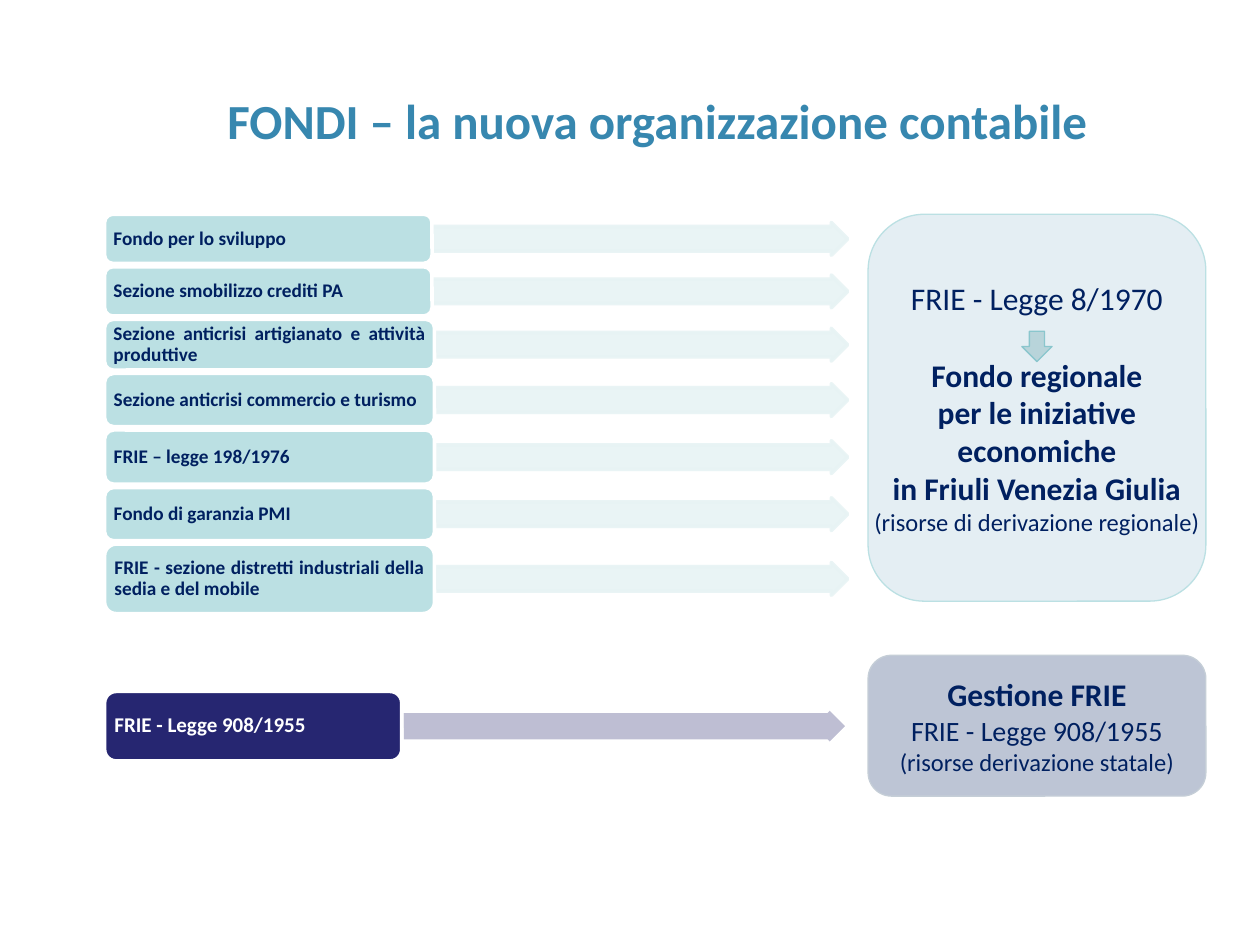
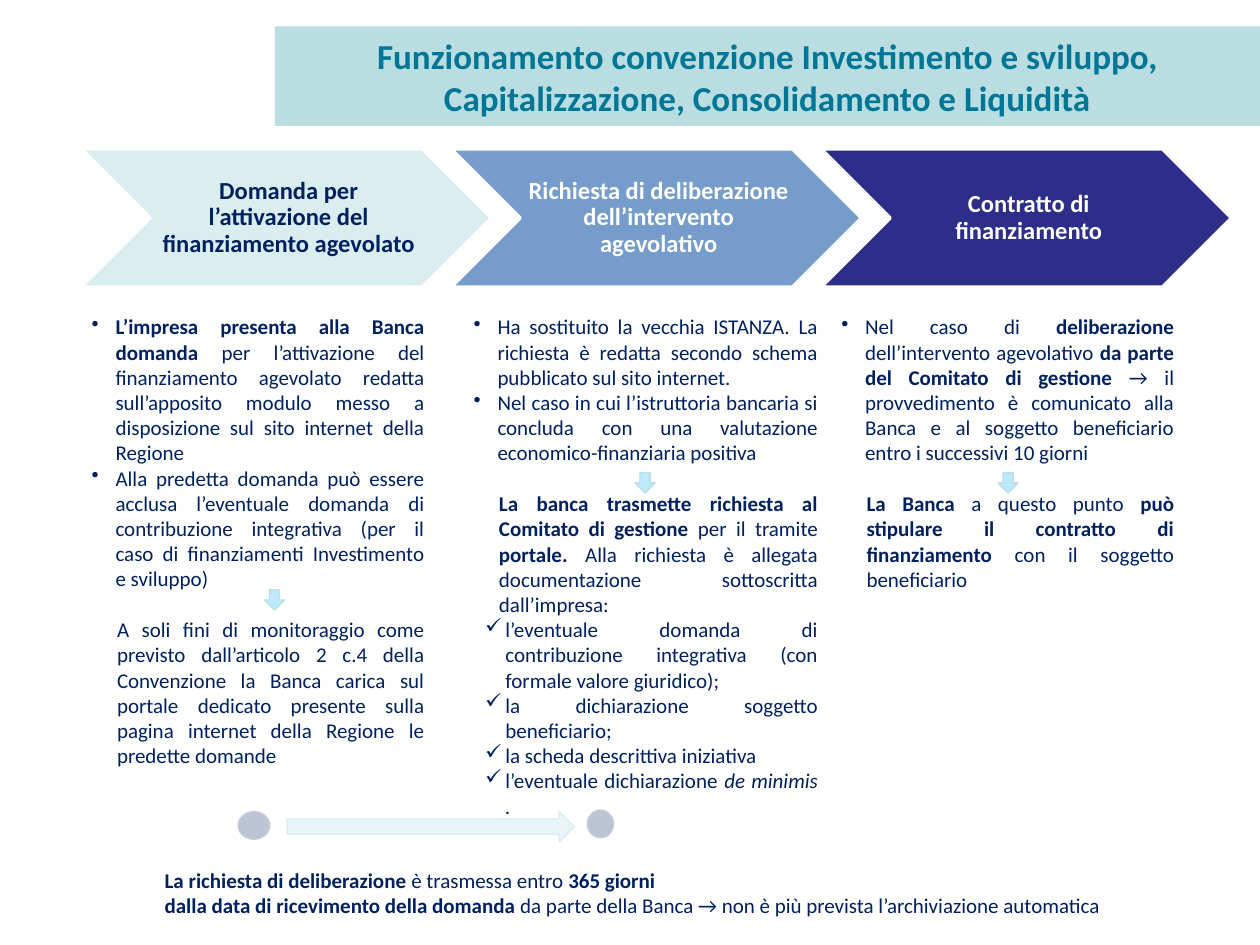
from dataclasses import dataclass
from typing import NamedTuple

from lxml import etree
from pptx import Presentation
from pptx.dml.color import RGBColor
from pptx.enum import shapes, text
from pptx.oxml import ns
from pptx.util import Cm, Pt

FONT = "Calibri"
NAVY, WHITE, AQUA, PALE = "002060", "FFFFFF", "BBE0E3", "E7F3F4"
GREY_LINE = "C5CED7"
KIND = shapes.MSO_SHAPE
ALIGN = text.PP_ALIGN
MIDDLE, TOP = text.MSO_ANCHOR.MIDDLE, text.MSO_ANCHOR.TOP
DEFAULT_INSETS = (0.25, 0.13, 0.25, 0.13)


class Area(NamedTuple):
    """Left, top, width and height in centimetres."""
    left: float
    top: float
    width: float
    height: float


class Look(NamedTuple):
    fill: str
    line: str
    line_width: float = 0.75
    fill_alpha: int = 100
    line_alpha: int = 100


@dataclass
class Para:
    """Text between asterisks is bold, between underscores italic."""
    words: str
    size: float = 12
    bold: bool = False
    color: str = NAVY
    align: ALIGN = ALIGN.CENTER
    bullet: str = ""
    margin: float = 0
    indent: float = 0
    before: float = 0
    spacing: float = 1.0


@dataclass
class Transfer:
    """A source fund and the arrow that leads to its new account."""
    label: str
    top: float
    width: float
    height: float


# Shared drawing functions
def paint(color_format, color: str, alpha: int = 100) -> None:
    color_format.rgb = RGBColor.from_string(color)
    if alpha < 100:
        node = color_format._xFill.find(ns.qn("a:srgbClr"))
        etree.SubElement(node, ns.qn("a:alpha"), val=str(alpha * 1000))


def write(frame, paras: list[Para], insets=DEFAULT_INSETS, anchor=MIDDLE, wrap=True) -> None:
    frame.word_wrap = wrap
    frame.auto_size = text.MSO_AUTO_SIZE.NONE
    frame.vertical_anchor = anchor
    (frame.margin_left, frame.margin_top,
     frame.margin_right, frame.margin_bottom) = map(Cm, insets)
    for index, item in enumerate(paras):
        para = frame.add_paragraph() if index else frame.paragraphs[0]
        para.alignment = item.align
        para.line_spacing = item.spacing
        if item.before:
            para.space_before = Pt(item.before)
        properties = para._p.get_or_add_pPr()
        properties.set("marL", str(Cm(item.margin)))
        properties.set("indent", str(Cm(item.indent)))
        if item.bullet:
            etree.SubElement(properties, ns.qn("a:buChar"), char=item.bullet)
        para.font.name, para.font.size = FONT, Pt(item.size)
        para.font.bold = item.bold
        para.font.color.rgb = RGBColor.from_string(item.color)
        for part, chunk in enumerate(item.words.split("*")):
            for piece, words in enumerate(chunk.split("_")):
                if not words:
                    continue
                span = para.add_run()
                span.text = words
                if part % 2:
                    span.font.bold = True
                if piece % 2:
                    span.font.italic = True


def add_box(page, kind, area: Area, look: Look, adjust: tuple = ()):
    box = page.shapes.add_shape(kind, *map(Cm, area))
    box.shadow.inherit = False
    box.fill.solid()
    paint(box.fill.fore_color, look.fill, look.fill_alpha)
    box.line.width = Pt(look.line_width)
    box.line.fill.solid()
    paint(box.line.fill.fore_color, look.line, look.line_alpha)
    for index, value in enumerate(adjust):
        box.adjustments[index] = value
    return box


def add_text(page, area: Area, paras: list[Para]) -> None:
    box = page.shapes.add_textbox(*map(Cm, area))
    write(box.text_frame, paras, anchor=TOP)


def add_titled_page(deck, words: str, area: Area, size: float, color: str, band: str = ""):
    page = deck.slides.add_slide(deck.slide_layouts[5])
    title = page.shapes.title
    title.left, title.top, title.width, title.height = map(Cm, area)
    if band:
        title.fill.solid()
        paint(title.fill.fore_color, band)
    write(title.text_frame, [Para(words, size, True, color)])
    return page


def add_transfer(page, row: Transfer, box_look: Look, arrow_look: Look,
                 arrow_height: float, size: float, color: str) -> None:
    left, arrow_end = 2.11, 17.09
    arrow_left = left + row.width
    arrow_top = row.top + (row.height - arrow_height) / 2
    add_box(page, KIND.RIGHT_ARROW,
            Area(arrow_left, arrow_top, arrow_end - arrow_left, arrow_height),
            arrow_look, (0.75, 0.5))
    box = add_box(page, KIND.ROUNDED_RECTANGLE,
                  Area(left, row.top, row.width, row.height), box_look)
    label = Para(row.label, size, True, color, ALIGN.JUSTIFY, spacing=0.9)
    write(box.text_frame, [label], (0.13, 0.05, 0.13, 0.05))


# Slide 1: funds and their new accounts
def build_funds(deck) -> None:
    page = add_titled_page(deck, "FONDI – la nuova organizzazione contabile",
                           Area(1.65, 1.7, 23.19, 1.45), 28, "3787AF")
    funds = [
        ("Fondo per lo sviluppo", 6.6, 0.99),
        ("Sezione smobilizzo crediti PA", 6.6, 0.99),
        ("Sezione anticrisi artigianato e attività produttive", 6.65, 1.02),
        ("Sezione anticrisi commercio e turismo", 6.65, 1.07),
        ("FRIE – legge 198/1976", 6.65, 1.09),
        ("Fondo di garanzia PMI", 6.65, 1.07),
        ("FRIE - sezione distretti industriali della sedia e del mobile", 6.65, 1.4),
    ]
    top, gap = 4.32, 0.07
    for label, width, height in funds:
        add_transfer(page, Transfer(label, top, width, height), Look(AQUA, WHITE, 2),
                     Look(PALE, PALE, 2, 90, 90), 0.66, 11, NAVY)
        top += height + gap
    add_transfer(page, Transfer("FRIE - Legge 908/1955", 13.94, 5.99, 1.4),
                 Look("262671", WHITE, 2), Look("B7B7CF", WHITE, 2, 90), 0.81, 12, WHITE)

    # Receiving accounts
    regional = [
        Para("FRIE - Legge 8/1970", 18),
        Para("Fondo regionale", 18, True, before=22),
        Para("per le iniziative", 18, True),
        Para("economiche", 18, True),
        Para("in Friuli Venezia Giulia", 18, True),
        Para("(risorse di derivazione regionale)", 14),
    ]
    state = [
        Para("Gestione FRIE", 18, True),
        Para("FRIE - Legge 908/1955", 16),
        Para("(risorse derivazione statale)", 14),
    ]
    for top, height, look, paras in (
            (4.32, 7.8, Look("99C1D3", AQUA, fill_alpha=26), regional),
            (13.21, 2.84, Look(NAVY, GREY_LINE, fill_alpha=26), state)):
        account = add_box(page, KIND.ROUNDED_RECTANGLE, Area(17.5, top, 6.81, height), look)
        write(account.text_frame, paras, wrap=False)
    add_box(page, KIND.DOWN_ARROW, Area(20.6, 6.68, 0.61, 0.61),
            Look("3C8C93", "8AC6CD", fill_alpha=26))


# Slide 2: steps of the agreement
def dot(words: str) -> Para:
    return Para(words, align=ALIGN.JUSTIFY, bullet="•", margin=0.48, indent=-0.48)


def tick(words: str) -> Para:
    return Para(words, align=ALIGN.JUSTIFY, bullet="✓", margin=0.64, indent=-0.41)


def outcome(words: str) -> Para:
    return Para(words, align=ALIGN.JUSTIFY, margin=0.51, before=14.6)


def build_steps(deck) -> None:
    page = add_titled_page(
        deck, "Funzionamento convenzione Investimento e sviluppo, "
        "Capitalizzazione, Consolidamento e Liquidità",
        Area(5.54, 0.53, 19.86, 2.01), 20, "007697", "BADDE1")

    # Chevrons
    steps = [
        ("Domanda per l’attivazione del finanziamento agevolato", "DAEDEF", NAVY),
        ("Richiesta di deliberazione dell’intervento agevolativo", "759CCB", WHITE),
        ("Contratto di finanziamento", "2D2D8A", WHITE),
    ]
    for index, (label, fill, color) in enumerate(steps):
        chevron = add_box(page, KIND.CHEVRON, Area(1.63 + 7.46 * index, 3, 8.28, 2.79),
                          Look(fill, WHITE, 2))
        write(chevron.text_frame, [Para(label, 14, True, color, spacing=0.9)],
              (0.15, 0.05, 0.05, 0.05))

    # Columns of explanations
    request = [
        dot("*L’impresa presenta alla Banca domanda* per l’attivazione del finanziamento "
            "agevolato redatta sull’apposito modulo messo a disposizione sul sito "
            "internet della Regione"),
        dot("Alla predetta domanda può essere acclusa l’eventuale domanda di contribuzione "
            "integrativa (per il caso di finanziamenti Investimento e sviluppo)"),
        outcome("A soli fini di monitoraggio come previsto dall’articolo 2 c.4 della "
                "Convenzione la Banca carica sul portale dedicato presente sulla pagina "
                "internet della Regione le predette domande"),
    ]
    decision = [
        dot("Ha sostituito la vecchia ISTANZA. La richiesta è redatta secondo schema "
            "pubblicato sul sito internet."),
        dot("Nel caso in cui l’istruttoria bancaria si concluda con una valutazione "
            "economico-finanziaria positiva"),
        outcome("*La banca trasmette richiesta al Comitato di gestione* per il tramite "
                "*portale.* Alla richiesta è allegata documentazione sottoscritta "
                "dall’impresa:"),
        tick("l’eventuale domanda di contribuzione integrativa (con formale valore giuridico);"),
        tick("la dichiarazione soggetto beneficiario;"),
        tick("la scheda descrittiva iniziativa"),
        tick("l’eventuale dichiarazione _de minimis ._"),
    ]
    contract = [
        dot("Nel caso di *deliberazione* dell’intervento agevolativo *da parte del Comitato "
            "di gestione* → il provvedimento è comunicato alla Banca e al soggetto "
            "beneficiario entro i successivi 10 giorni"),
        outcome("*La Banca* a questo punto *può stipulare il contratto di finanziamento* "
                "con il soggetto beneficiario"),
    ]
    add_text(page, Area(1.6, 6.2, 7.21, 9.5), request)
    add_text(page, Area(9.3, 6.2, 7.44, 9.5), decision)
    add_text(page, Area(16.71, 6.2, 7.21, 5.89), contract)
    for left, top in ((5.33, 11.89), (12.8, 9.53), (20.12, 9.53)):
        add_box(page, KIND.DOWN_ARROW, Area(left, top, 0.41, 0.41),
                Look("00B0F0", AQUA, fill_alpha=26))

    # Time limit between request and decision
    add_box(page, KIND.RIGHT_ARROW, Area(5.79, 16.36, 5.79, 0.61),
            Look("ADD8E5", "DAEDEF", fill_alpha=26))
    for area in (Area(4.8, 16.36, 0.64, 0.56), Area(11.84, 16.33, 0.53, 0.56)):
        add_box(page, KIND.OVAL, area, Look(NAVY, GREY_LINE, fill_alpha=26))
    add_text(page, Area(3.07, 17.35, 21.59, 1.27), [
        Para("*La richiesta di deliberazione* è trasmessa entro *365 giorni*",
             align=ALIGN.LEFT),
        Para("*dalla data di ricevimento della domanda* da parte della Banca → "
             "non è più prevista l’archiviazione automatica", align=ALIGN.LEFT),
    ])


def main() -> None:
    deck = Presentation()
    deck.slide_width, deck.slide_height = Cm(25.4), Cm(19.05)
    build_funds(deck)
    build_steps(deck)
    deck.save("out.pptx")


if __name__ == "__main__":
    main()
